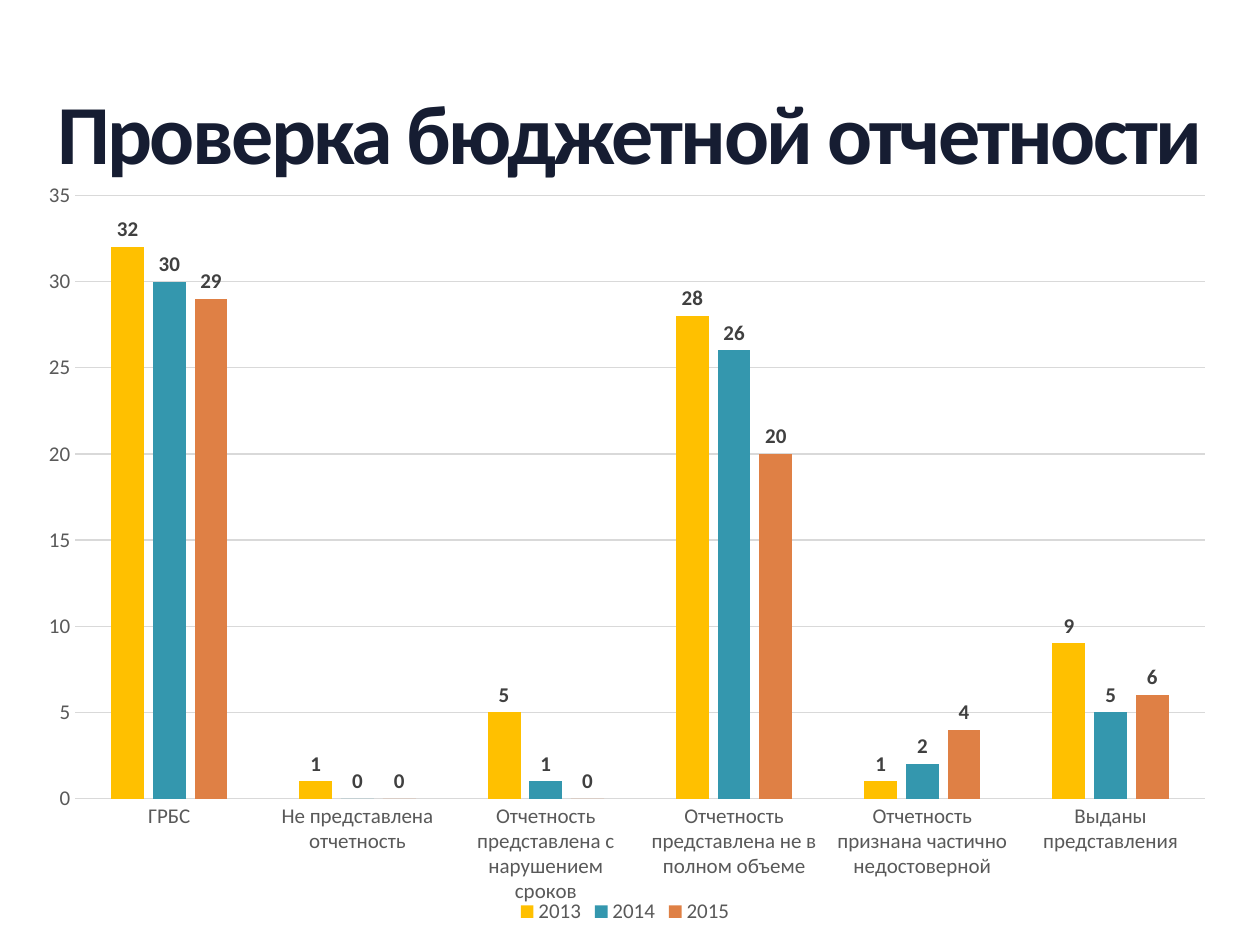
from lxml.etree import SubElement
from pptx import Presentation
from pptx.chart.data import CategoryChartData
from pptx.dml.color import RGBColor
from pptx.enum.chart import (XL_CHART_TYPE, XL_LABEL_POSITION,
                             XL_LEGEND_POSITION, XL_TICK_MARK)
from pptx.enum.text import MSO_ANCHOR, PP_ALIGN
from pptx.oxml.ns import qn
from pptx.util import Cm, Pt

FONT = "Calibri"
CATEGORIES = [
    "ГРБС",
    "Не представлена отчетность",
    "Отчетность представлена с нарушением сроков",
    "Отчетность представлена не в полном объеме",
    "Отчетность признана частично недостоверной",
    "Выданы представления",
]
YEARS = [
    ("2013", "FFC000", (32, 1, 5, 28, 1, 9)),
    ("2014", "3497AE", (30, 0, 1, 26, 2, 5)),
    ("2015", "DF8045", (29, 0, 0, 20, 4, 6)),
]


def color(value):
    """Return the colour for a hex string."""
    return RGBColor.from_string(value)


def set_font(font, size, value, bold=False):
    """Apply typeface, size, colour and weight to a font."""
    font.name = FONT
    font.size = Pt(size)
    font.bold = bold
    font.color.rgb = color(value)


def set_line(line):
    """Draw a thin light grey line."""
    line.width = Pt(0.75)
    line.color.rgb = color("D9D9D9")


def add_title(page, text):
    """Add the centred, tightly spaced heading."""
    box = page.shapes.add_textbox(Cm(0.3), Cm(1.8), Cm(24.8), Cm(1.93))
    frame = box.text_frame
    frame.word_wrap = True
    frame.vertical_anchor = MSO_ANCHOR.MIDDLE
    frame.margin_left = frame.margin_right = 0
    frame.margin_top = frame.margin_bottom = 0
    para = frame.paragraphs[0]
    para.alignment = PP_ALIGN.CENTER
    para.line_spacing = 0.9
    set_font(para.font, 48, "161D32", bold=True)
    span = para.add_run()
    span.text = text
    span._r.get_or_add_rPr().set("spc", "-150")


def place_plot(chart, **edges):
    """Fix the inner plot area as fractions of the chart."""
    area = chart._chartSpace.chart.plotArea
    for old in area.findall(qn("c:layout")):
        area.remove(old)
    layout = SubElement(area, qn("c:layout"))
    area.insert(0, layout)
    manual = SubElement(layout, qn("c:manualLayout"))
    settings = {"layoutTarget": "inner", "xMode": "edge", "yMode": "edge", **edges}
    for name, value in settings.items():
        SubElement(manual, qn(f"c:{name}")).set("val", str(value))


def style_axes(chart):
    """Set axis text, tick marks, lines and grid."""
    for axis in (chart.category_axis, chart.value_axis):
        axis.major_tick_mark = axis.minor_tick_mark = XL_TICK_MARK.NONE
        set_font(axis.tick_labels.font, 12, "595959")
    set_line(chart.category_axis.format.line)
    values = chart.value_axis
    values.minimum_scale, values.maximum_scale, values.major_unit = 0, 35, 5
    values.format.line.fill.background()
    values.has_major_gridlines = True
    set_line(values.major_gridlines.format.line)


def style_series(series, fill):
    """Colour the columns and show their values above them."""
    series.format.fill.solid()
    series.format.fill.fore_color.rgb = color(fill)
    series.invert_if_negative = False
    labels = series.data_labels
    labels.show_value = True
    labels.position = XL_LABEL_POSITION.OUTSIDE_END
    set_font(labels.font, 12, "404040", bold=True)


def add_report_chart(page):
    """Add the clustered columns comparing the years."""
    data = CategoryChartData()
    data.categories = CATEGORIES
    for name, _, values in YEARS:
        data.add_series(name, values)
    chart = page.shapes.add_chart(
        XL_CHART_TYPE.COLUMN_CLUSTERED,
        Cm(0.5), Cm(3.53), Cm(24.2), Cm(15.2), data).chart
    set_font(chart.font, 10, "000000")
    chart.has_title = False
    chart.has_legend = True
    chart.legend.position = XL_LEGEND_POSITION.BOTTOM
    chart.legend.include_in_layout = False
    set_font(chart.legend.font, 12, "595959")
    style_axes(chart)
    plot = chart.plots[0]
    plot.vary_by_categories = False
    plot.gap_width = 219
    plot.overlap = -27
    for series, (_, fill, _) in zip(plot.series, YEARS):
        style_series(series, fill)
    place_plot(chart, x=0.042, y=0.027, w=0.941, h=0.8)


def main():
    """Build the slide and save it."""
    deck = Presentation()
    deck.slide_width, deck.slide_height = Cm(25.4), Cm(19.05)
    page = deck.slides.add_slide(deck.slide_layouts[6])
    add_title(page, "Проверка бюджетной отчетности")
    add_report_chart(page)
    deck.save("out.pptx")


if __name__ == "__main__":
    main()
